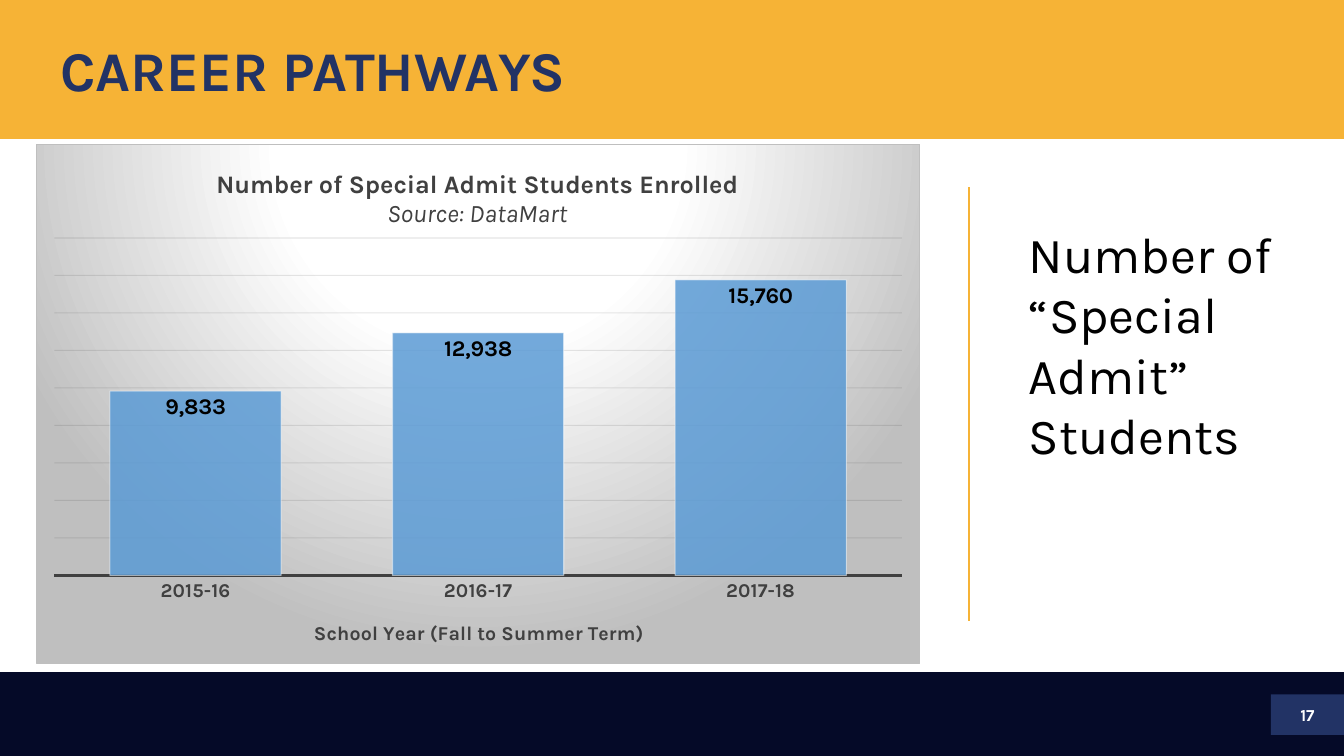
"""Build the Career Pathways slide with its special admit enrolment chart."""
from lxml.etree import SubElement
from pptx import Presentation
from pptx.chart.data import CategoryChartData
from pptx.dml.color import RGBColor
from pptx.enum.chart import XL_CHART_TYPE as ChartType, XL_LABEL_POSITION as LabelPos, XL_TICK_MARK as Tick
from pptx.enum.shapes import MSO_CONNECTOR as Connector, MSO_SHAPE as Shape
from pptx.enum.text import MSO_ANCHOR as Anchor, PP_ALIGN as Align
from pptx.oxml import parse_xml
from pptx.oxml.ns import nsdecls, qn
from pptx.util import Cm, Pt

AMBER = RGBColor(0xF6, 0xB3, 0x36)
NIGHT = RGBColor(0x05, 0x0A, 0x28)
NAVY = RGBColor(0x22, 0x33, 0x65)
WHITE = RGBColor(0xFF, 0xFF, 0xFF)
BLACK = RGBColor(0, 0, 0)
CHARCOAL = RGBColor(0x40, 0x40, 0x40)
GRID = RGBColor(0x0D, 0x0D, 0x0D)
BLUE = RGBColor(0x5B, 0x9B, 0xD5)
FONT = "Karla"

HEADING = "CAREER PATHWAYS"
PAGE = "17"
CALLOUT = "Number of “Special Admit” Students"
CHART_TITLE = [("Number of Special Admit Students Enrolled", True, False),
               ("Source: DataMart", False, True)]
AXIS_TITLE = [("School Year (Fall to Summer Term)", True, False)]
ENROLLED = {"2015-16": 9833, "2016-17": 12938, "2017-18": 15760}

WIDTH, HEIGHT = 33.87, 19.05
BANDS = [(0, 0, WIDTH, 3.5, AMBER), (0, 16.94, WIDTH, HEIGHT - 16.94, NIGHT)]
PAGE_BOX = (32.03, 17.5, WIDTH - 32.03, 1.02)
HEADING_BOX = (1.27, 0, 31.22, 3.68)
CALLOUT_BOX = (25.68, 5.49, 7.29, 6.4)
CHART_BOX = (0.91, 3.63, 22.28, 13.11)
RULE_X, RULE_TOP, RULE_BOTTOM = 24.43, 4.72, 15.65

BACKDROP = f"""<c:spPr {nsdecls("c", "a")}>
<a:gradFill><a:gsLst>
<a:gs pos="0"><a:srgbClr val="FFFFFF"/></a:gs>
<a:gs pos="39000"><a:srgbClr val="FFFFFF"/></a:gs>
<a:gs pos="100000"><a:srgbClr val="BFBFBF"/></a:gs></a:gsLst>
<a:path path="circle"><a:fillToRect l="50000" t="-80000" r="50000" b="180000"/></a:path>
</a:gradFill>
<a:ln w="9525"><a:solidFill><a:srgbClr val="BFBFBF"/></a:solidFill></a:ln></c:spPr>"""


def style(font, size, color, bold=False, italic=False):
    font.name, font.size, font.bold, font.italic = FONT, Pt(size), bold, italic
    font.color.rgb = color


def write(frame, lines, size, color, align=Align.LEFT):
    for index, (text, bold, italic) in enumerate(lines):
        paragraph = frame.add_paragraph() if index else frame.paragraphs[0]
        paragraph.alignment = align
        run = paragraph.add_run()
        run.text = text
        style(run.font, size, color, bold, italic)


def add_band(slide, left, top, width, height, color):
    band = slide.shapes.add_shape(Shape.RECTANGLE, Cm(left), Cm(top), Cm(width), Cm(height))
    band.shadow.inherit = False
    band.fill.solid()
    band.fill.fore_color.rgb = color
    band.line.fill.background()
    return band


def add_text(slide, box, text, size, color, bold=False, anchor=Anchor.TOP):
    frame = slide.shapes.add_textbox(*map(Cm, box)).text_frame
    frame.word_wrap, frame.vertical_anchor = True, anchor
    write(frame, [(text, bold, False)], size, color)
    return frame


def set_line(line, color, width, opacity=100):
    line.color.rgb, line.width = color, Pt(width)
    set_opacity(line.fill, color, opacity, line)


def set_opacity(fill, color, percent, owner=None):
    fill.solid()
    fill.fore_color.rgb = color
    root = owner._ln if owner else fill._xPr.find(qn("a:solidFill"))
    SubElement(next(root.iter(qn("a:srgbClr"))), qn("a:alpha")).set("val", str(percent * 1000))


def place(element, after, **fractions):
    for old in element.findall(qn("c:layout")):
        element.remove(old)
    inner = '<c:layoutTarget val="inner"/>' if "w" in fractions else ""
    modes = "".join(f'<c:{key}Mode val="edge"/>' for key in "xy")
    sizes = "".join(f'<c:{key} val="{value}"/>' for key, value in fractions.items())
    element.insert(after, parse_xml(
        f'<c:layout {nsdecls("c")}><c:manualLayout>{inner}{modes}{sizes}</c:manualLayout></c:layout>'))


def add_enrolment_chart(slide):
    data = CategoryChartData(number_format="#,##0")
    data.categories = list(ENROLLED)
    data.add_series("Series 1", list(ENROLLED.values()))
    chart = slide.shapes.add_chart(ChartType.COLUMN_CLUSTERED, *map(Cm, CHART_BOX), data).chart
    chart.has_legend = False
    style(chart.font, 10, BLACK)
    chart._chartSpace.find(qn("c:txPr")).addprevious(parse_xml(BACKDROP))

    write(chart.chart_title.text_frame, CHART_TITLE, 18, CHARCOAL, Align.CENTER)
    chart.chart_title.include_in_layout = False
    place(chart.chart_title._element, 1, x=0.2, y=0.04)
    place(chart._chartSpace.chart.plotArea, 0, x=0.02, y=0.18, w=0.96, h=0.65)

    years = chart.category_axis
    years.major_tick_mark = Tick.NONE
    style(years.tick_labels.font, 14, CHARCOAL, True)
    set_line(years.format.line, CHARCOAL, 1.5)
    write(years.axis_title.text_frame, AXIS_TITLE, 14, CHARCOAL, Align.CENTER)
    place(years.axis_title._element, 1, x=0.31, y=0.91)

    counts = chart.value_axis
    counts.visible = False
    counts.minimum_scale, counts.maximum_scale, counts.major_unit = 0, 18000, 2000
    counts.has_major_gridlines = True
    set_line(counts.major_gridlines.format.line, GRID, 0.75, 10)

    plot = chart.plots[0]
    plot.gap_width, plot.vary_by_categories = 65, False
    bars = plot.series[0]
    set_opacity(bars.format.fill, BLUE, 85)
    set_line(bars.format.line, WHITE, 0.75, 50)
    labels = bars.data_labels
    labels.show_value, labels.position = True, LabelPos.INSIDE_END
    labels.number_format, labels.number_format_is_linked = "#,##0", False
    style(labels.font, 16, BLACK, True)


def main():
    deck = Presentation()
    deck.slide_width, deck.slide_height = Cm(WIDTH), Cm(HEIGHT)
    slide = deck.slides.add_slide(deck.slide_layouts[6])
    for band in BANDS:
        add_band(slide, *band)
    page = add_band(slide, *PAGE_BOX, NAVY).text_frame
    page.vertical_anchor = Anchor.MIDDLE
    write(page, [(PAGE, True, False)], 12, WHITE, Align.CENTER)

    heading = add_text(slide, HEADING_BOX, HEADING, 40, NAVY, True, Anchor.MIDDLE)
    heading.paragraphs[0].line_spacing = 0.9
    add_text(slide, CALLOUT_BOX, CALLOUT, 36, BLACK)
    rule = slide.shapes.add_connector(
        Connector.STRAIGHT, Cm(RULE_X), Cm(RULE_TOP), Cm(RULE_X), Cm(RULE_BOTTOM))
    rule.line.color.rgb, rule.line.width = AMBER, Pt(1.5)
    SubElement(rule._element.spPr, qn("a:effectLst"))
    add_enrolment_chart(slide)
    deck.save("out.pptx")


if __name__ == "__main__":
    main()
